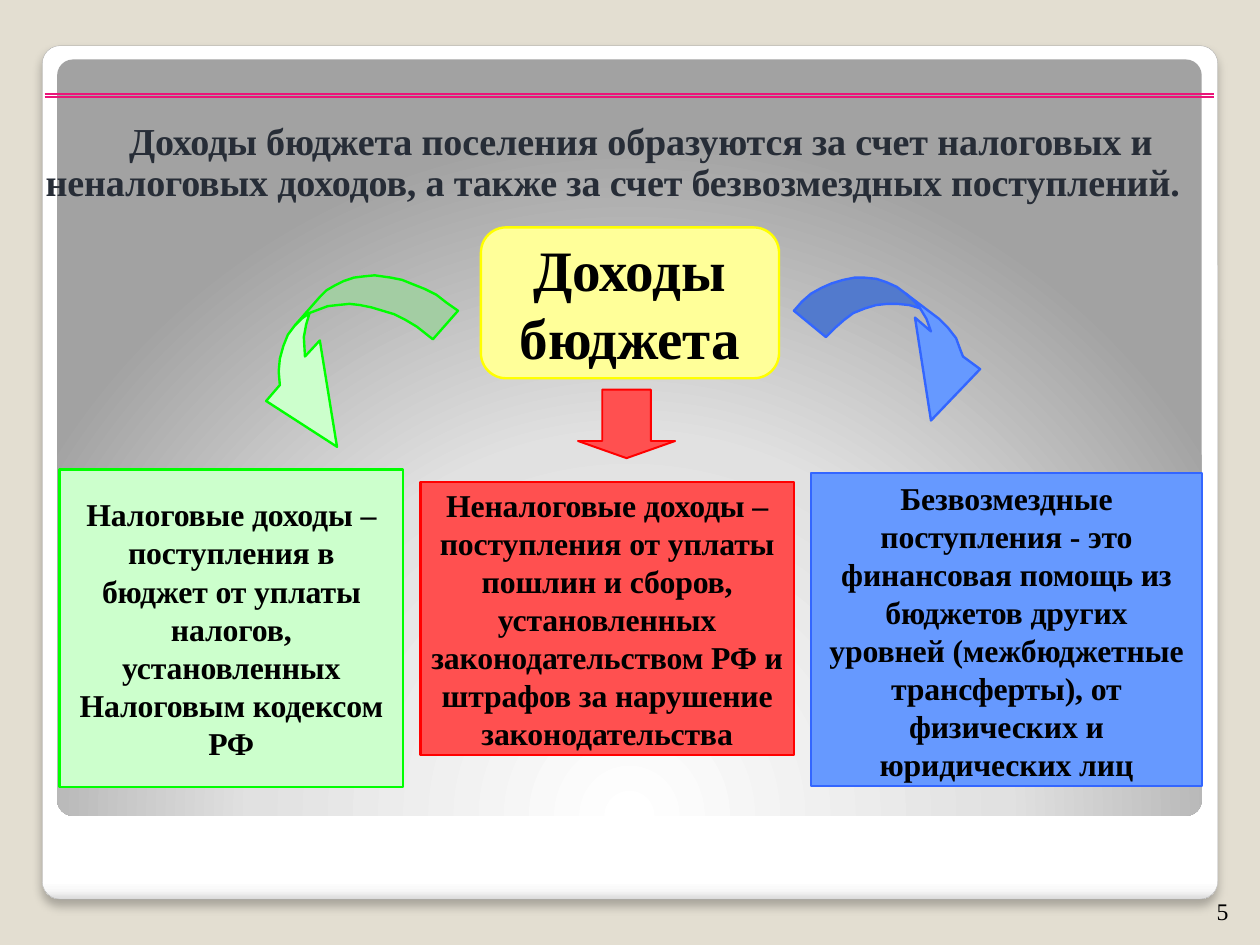
"""Build the slide about the sources of the settlement budget income."""
from lxml.etree import SubElement
from pptx import Presentation
from pptx.dml.color import RGBColor
from pptx.enum.shapes import MSO_CONNECTOR, MSO_SHAPE
from pptx.enum.text import MSO_ANCHOR, PP_ALIGN
from pptx.oxml.ns import qn
from pptx.util import Inches, Pt

FONT = "Times New Roman"
COLORS = {
    "background": "E3DED1", "card_line": "A4A4A4", "rule": "EA1579",
    "title": "272D37", "text": "000000",
    "yellow": "FFFF99", "yellow_line": "FFFF00",
    "green": "CCFFCC", "green_dark": "A3CDA3", "green_line": "00FF00",
    "red": "FF5050", "red_line": "FF0000",
    "blue": "6699FF", "blue_dark": "527ACD", "blue_line": "3366FF",
}
CARD_STOPS = [(0, "FFFFFF"), (98, "FFFFFF"), (99, "F7F7F7"), (100, "DADADA")]
PANEL_STOPS = [(0, "FFFFFF"), (55, "E1E1E1"), (100, "A2A2A2")]

TITLE = ("Доходы бюджета поселения образуются за счет налоговых и",
         "неналоговых доходов, а также за счет безвозмездных поступлений.")
HEADING = ("Доходы", "бюджета")
PAGE_NUMBER = "5"
INCOME_BOXES = [
    ("green", (0.52, 4.11, 3.01, 2.78), 0,
     ("Налоговые доходы –", "поступления в", "бюджет от уплаты", "налогов,",
      "установленных", "Налоговым кодексом", "РФ")),
    ("red", (3.68, 4.22, 3.27, 2.39), 0,
     ("Неналоговые доходы –", "поступления от уплаты", "пошлин и сборов,",
      "установленных", "законодательством РФ и", "штрафов за нарушение",
      "законодательства")),
    ("blue", (7.1, 4.14, 3.42, 2.74), 0.02,
     ("Безвозмездные", "поступления - это", "финансовая помощь из",
      "бюджетов других", "уровней (межбюджетные", "трансферты), от",
      "физических и", "юридических лиц")),
]
CURVED_ARROWS = [
    ("green", "green_dark",
     [(4.01, 2.72), (3.91, 2.65), (3.82, 2.58), (3.72, 2.53), (3.62, 2.49),
      (3.52, 2.45), (3.42, 2.43), (3.28, 2.41), (3.18, 2.42), (3.1, 2.43),
      (3.01, 2.46), (2.93, 2.5), (2.86, 2.54), (2.8, 2.6), (2.58, 2.85),
      (2.64, 2.79), (2.71, 2.74), (2.79, 2.71), (2.87, 2.68), (2.96, 2.67),
      (3.06, 2.66), (3.15, 2.67), (3.25, 2.69), (3.35, 2.72), (3.45, 2.75),
      (3.55, 2.8), (3.65, 2.86), (3.79, 2.97)]),
    ("green", "green",
     [(2.71, 2.74), (2.68, 2.84), (2.66, 2.95), (2.67, 3.12), (2.8, 2.98),
      (2.95, 3.91), (2.33, 3.51), (2.45, 3.37), (2.44, 3.25), (2.45, 3.14),
      (2.48, 3.03), (2.52, 2.93), (2.58, 2.85), (2.64, 2.79)]),
    ("blue", "blue_dark",
     [(6.95, 2.72), (7.02, 2.64), (7.1, 2.57), (7.19, 2.52), (7.28, 2.48),
      (7.38, 2.45), (7.48, 2.43), (7.57, 2.43), (7.67, 2.44), (7.76, 2.47),
      (7.85, 2.51), (7.93, 2.57), (8.02, 2.65), (8.06, 2.7), (7.96, 2.67),
      (7.86, 2.66), (7.76, 2.66), (7.67, 2.67), (7.57, 2.7), (7.47, 2.74),
      (7.39, 2.8), (7.31, 2.87), (7.23, 2.95)]),
    ("blue", "blue",
     [(7.93, 2.57), (8.22, 2.79), (8.3, 2.87), (8.37, 2.96), (8.41, 3.07),
      (8.43, 3.12), (8.58, 3.23), (8.15, 3.68), (8.01, 2.78), (8.15, 2.9),
      (8.11, 2.79), (8.05, 2.69), (7.98, 2.61)]),
]


def color(name):
    return RGBColor.from_string(COLORS[name])


def paint(shape, fill, line, width=1.5):
    shape.shadow.inherit = False
    shape.fill.solid()
    shape.fill.fore_color.rgb = color(fill)
    shape.line.color.rgb = color(line)
    shape.line.width = Pt(width)


def add_shape(slide, preset, area, adjustments=()):
    shape = slide.shapes.add_shape(preset, *map(Inches, area))
    shape.shadow.inherit = False
    for index, value in enumerate(adjustments):
        shape.adjustments[index] = value
    return shape


def write(shape, lines, size, leading, name="text", bold=True,
          align=PP_ALIGN.CENTER, anchor=MSO_ANCHOR.MIDDLE, top=0):
    frame = shape.text_frame
    frame.word_wrap = True
    frame.vertical_anchor = anchor
    frame.margin_left = frame.margin_right = frame.margin_bottom = 0
    frame.margin_top = Inches(top)
    paragraph = frame.paragraphs[0]
    paragraph.text = "\v".join(lines)
    paragraph.alignment = align
    paragraph.line_spacing = Pt(leading)
    paragraph.font.name = FONT
    paragraph.font.size = Pt(size)
    paragraph.font.bold = bold
    paragraph.font.color.rgb = color(name)
    for run in paragraph.runs:
        run._r.get_or_add_rPr().set("spc", "-10")
    return paragraph


def fill_gradient(shape, stops, circle=False):
    shape.fill.background()
    properties = shape._element.spPr
    old_fill = properties.find(qn("a:noFill"))
    gradient = SubElement(properties, qn("a:gradFill"), rotWithShape="1")
    properties.replace(old_fill, gradient)
    stop_list = SubElement(gradient, qn("a:gsLst"))
    for position, value in stops:
        stop = SubElement(stop_list, qn("a:gs"), pos=str(position * 1000))
        SubElement(stop, qn("a:srgbClr"), val=value)
    if circle:
        focus = SubElement(gradient, qn("a:path"), path="circle")
        SubElement(focus, qn("a:fillToRect"),
                   l="50000", t="175000", r="50000", b="-75000")
    else:
        SubElement(gradient, qn("a:lin"), ang="5400000", scaled="0")


def add_card(slide):
    card = add_shape(slide, MSO_SHAPE.ROUNDED_RECTANGLE,
                     (0.37, 0.4, 10.29, 7.47), [0.021])
    fill_gradient(card, CARD_STOPS)
    card.line.color.rgb = color("card_line")
    card.line.width = Pt(0.16)
    effects = card._element.spPr.find(qn("a:effectLst"))
    shadow = SubElement(effects, qn("a:outerShdw"), blurRad=str(Pt(6)),
                        dist=str(Pt(4)), dir="5400000", rotWithShape="0")
    tint = SubElement(shadow, qn("a:srgbClr"), val=COLORS["text"])
    SubElement(tint, qn("a:alpha"), val="25000")

    panel = add_shape(slide, MSO_SHAPE.ROUNDED_RECTANGLE,
                      (0.5, 0.52, 10.02, 6.62), [0.021])
    fill_gradient(panel, PANEL_STOPS, circle=True)
    panel.line.fill.background()


def add_rules(slide):
    for y in (0.82, 0.85):
        rule = slide.shapes.add_connector(
            MSO_CONNECTOR.STRAIGHT, *map(Inches, (0.39, y, 10.63, y)))
        rule.line.color.rgb = color("rule")
        rule.line.width = Pt(1.25)
        SubElement(rule._element.spPr, qn("a:effectLst"))


def add_title(slide):
    title = slide.shapes.title
    title.left, title.top, title.width, title.height = map(
        Inches, (0.39, 1.06, 10.06, 0.73))
    paragraph = write(title, TITLE, 24, 25.9, "title",
                      align=PP_ALIGN.LEFT, anchor=MSO_ANCHOR.BOTTOM)
    indents = paragraph._p.get_or_add_pPr()
    indents.set("marL", str(Inches(0.01)))
    indents.set("indent", str(Inches(0.73)))
    slide.shapes._spTree.append(title._element)


def main():
    presentation = Presentation()
    presentation.slide_width, presentation.slide_height = Inches(11.03), Inches(8.27)
    slide = presentation.slides.add_slide(presentation.slide_layouts[5])
    slide.background.fill.solid()
    slide.background.fill.fore_color.rgb = color("background")
    add_card(slide)
    add_title(slide)
    add_rules(slide)

    heading = add_shape(slide, MSO_SHAPE.ROUNDED_RECTANGLE,
                        (4.21, 1.99, 2.61, 1.32), [0.167])
    paint(heading, "yellow", "yellow_line")
    write(heading, HEADING, 36, 42.9)

    for name, area, top, lines in INCOME_BOXES:
        box = add_shape(slide, MSO_SHAPE.RECTANGLE, area)
        paint(box, name, f"{name}_line")
        write(box, lines, 20, 24, top=top)

    for name, fill, points in CURVED_ARROWS:
        start, *corners = [(Inches(x), Inches(y)) for x, y in points]
        builder = slide.shapes.build_freeform(*start)
        builder.add_line_segments(corners, close=True)
        paint(builder.convert_to_shape(), fill, f"{name}_line")

    down_arrow = add_shape(slide, MSO_SHAPE.DOWN_ARROW,
                           (5.06, 3.41, 0.85, 0.6), [0.5, 0.25])
    paint(down_arrow, "red", "red_line", 1.25)

    number = slide.shapes.add_textbox(*map(Inches, (10.65, 7.85, 0.13, 0.26)))
    write(number, [PAGE_NUMBER], 15, 18, bold=False,
          align=PP_ALIGN.LEFT, anchor=MSO_ANCHOR.TOP)
    presentation.save("out.pptx")


if __name__ == "__main__":
    main()
